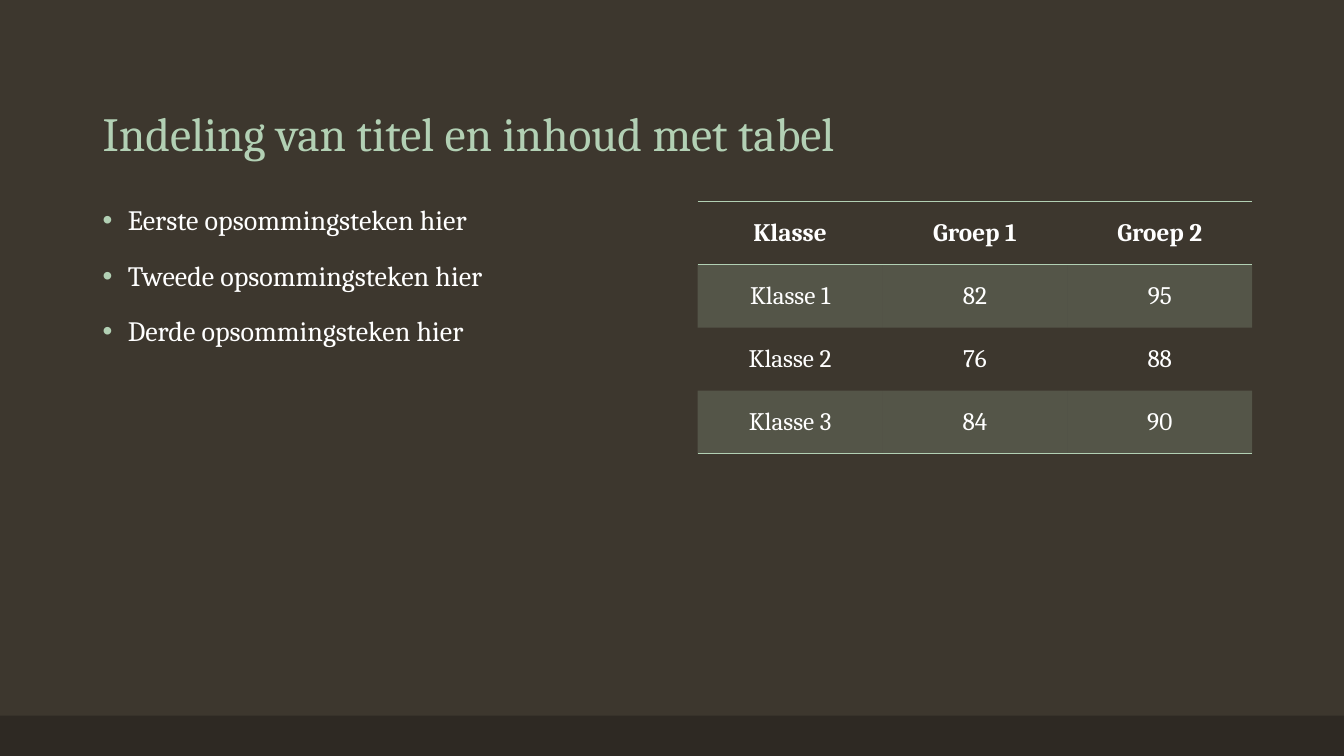
from pptx import Presentation
from pptx.dml.color import RGBColor
from pptx.enum.shapes import MSO_SHAPE
from pptx.enum.text import MSO_ANCHOR, PP_ALIGN
from pptx.oxml.ns import qn
from pptx.util import Inches, Pt
from lxml.etree import SubElement

BROWN = RGBColor(0x3D, 0x37, 0x2E)
DARK = RGBColor(0x2E, 0x29, 0x23)
GREEN = RGBColor(0xB2, 0xD0, 0xB4)
WHITE = RGBColor(0xFF, 0xFF, 0xFF)
NO_GRID_STYLE = "{2D5ABB26-0587-4C30-8999-92F81FD0307C}"

TITLE = "Indeling van titel en inhoud met tabel"
BULLETS = [
    "Eerste opsommingsteken hier",
    "Tweede opsommingsteken hier",
    "Derde opsommingsteken hier",
]
ROWS = [
    ["Klasse", "Groep 1", "Groep 2"],
    ["Klasse 1", "82", "95"],
    ["Klasse 2", "76", "88"],
    ["Klasse 3", "84", "90"],
]


class SlideBuilder:
    font = "Cambria"

    def __init__(self, slide):
        self.s = slide

    def background(self, color):
        fill = self.s.background.fill
        fill.solid()
        fill.fore_color.rgb = color

    def bar(self, box, color):
        sp = self.s.shapes.add_shape(MSO_SHAPE.RECTANGLE, *map(Inches, box))
        sp.shadow.inherit = False
        sp.fill.solid()
        sp.fill.fore_color.rgb = color
        sp.line.fill.background()

    def add_text_run(self, p, text, color, paragraph_format, **font_format):
        r = p.add_run()
        r.text = text
        r.font.color.rgb = color
        for name, value in {"name": self.font, **font_format}.items():
            setattr(r.font, name, value)
        for name, value in paragraph_format.items():
            setattr(p, name, value)

    def bullet(self, p):
        pPr = p._p.get_or_add_pPr()
        pPr.set("marL", str(Inches(0.25)))
        pPr.set("indent", str(-Inches(0.25)))
        color = SubElement(pPr, qn("a:buClr"))
        SubElement(color, qn("a:srgbClr"), val=str(GREEN))
        SubElement(pPr, qn("a:buFont"), typeface="Arial")
        SubElement(pPr, qn("a:buChar"), char="•")

    def text(self, box, lines, size, color, anchor, before=0, bullets=False):
        tf = self.s.shapes.add_textbox(*map(Inches, box)).text_frame
        tf.word_wrap = True
        tf.vertical_anchor = anchor
        spacing = {"line_spacing": 0.9, "space_before": Pt(before)}
        for i, line in enumerate(lines):
            p = tf.add_paragraph() if i else tf.paragraphs[0]
            self.add_text_run(p, line, color, spacing, size=Pt(size))
            if bullets:
                self.bullet(p)

    def border(self, cell, side):
        ln = SubElement(cell._tc.get_or_add_tcPr(), qn(f"a:ln{side}"), w=str(Pt(1)))
        fill = SubElement(ln, qn("a:solidFill"))
        SubElement(fill, qn("a:srgbClr"), val=str(GREEN))

    def tint(self, cell, percent):
        cell.fill.solid()
        cell.fill.fore_color.rgb = GREEN
        color = cell._tc.tcPr.find(f"{qn('a:solidFill')}/{qn('a:srgbClr')}")
        SubElement(color, qn("a:alpha"), val=str(percent * 1000))

    def table(self, box, rows):
        frame = self.s.shapes.add_table(len(rows), len(rows[0]), *map(Inches, box))
        table = frame.table
        table._tbl.tblPr.find(qn("a:tableStyleId")).text = NO_GRID_STYLE
        last = len(rows) - 1
        for i, row in enumerate(rows):
            for j, value in enumerate(row):
                cell = table.cell(i, j)
                cell.vertical_anchor = MSO_ANCHOR.MIDDLE
                self.add_text_run(cell.text_frame.paragraphs[0], value, WHITE,
                                  {"alignment": PP_ALIGN.CENTER},
                                  size=Pt(18), bold=i == 0)
                if i == 0:
                    self.border(cell, "T")
                if i in (0, last):
                    self.border(cell, "B")
                if i % 2:
                    self.tint(cell, 20)
                else:
                    cell.fill.background()


def main():
    prs = Presentation()
    prs.slide_width, prs.slide_height = Inches(13.33), Inches(7.5)
    s = SlideBuilder(prs.slides.add_slide(prs.slide_layouts[6]))
    s.background(BROWN)
    s.bar((0, 7.1, 13.33, 0.4), DARK)
    s.text((0.92, 0.4, 11.5, 1.25), [TITLE], 34, GREEN, MSO_ANCHOR.BOTTOM)
    s.text((0.92, 2, 5.5, 4.76), BULLETS, 20, WHITE, MSO_ANCHOR.TOP,
           before=18, bullets=True)
    s.table((6.92, 2, 5.5, 2.5), ROWS)
    prs.save("out.pptx")


if __name__ == "__main__":
    main()
